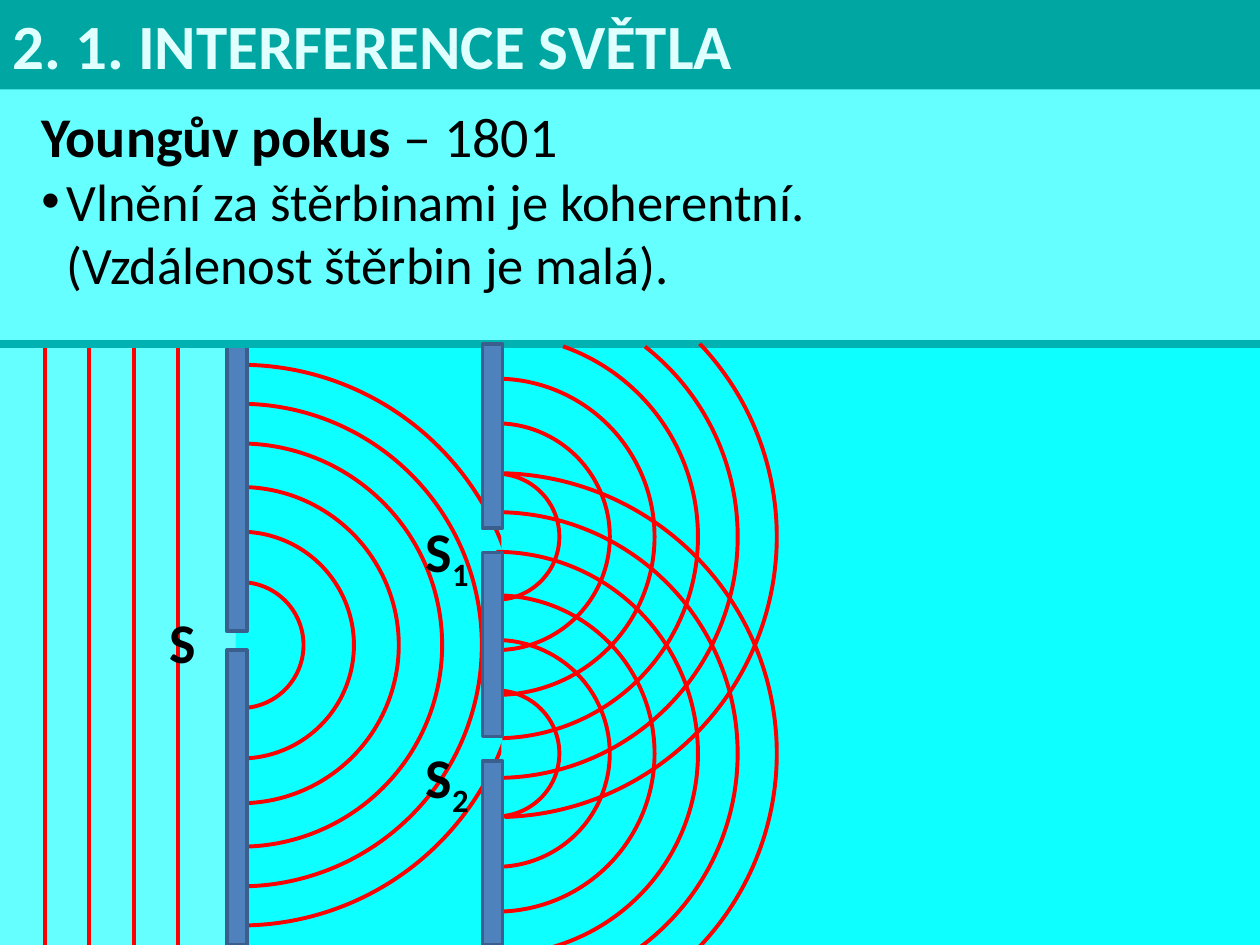
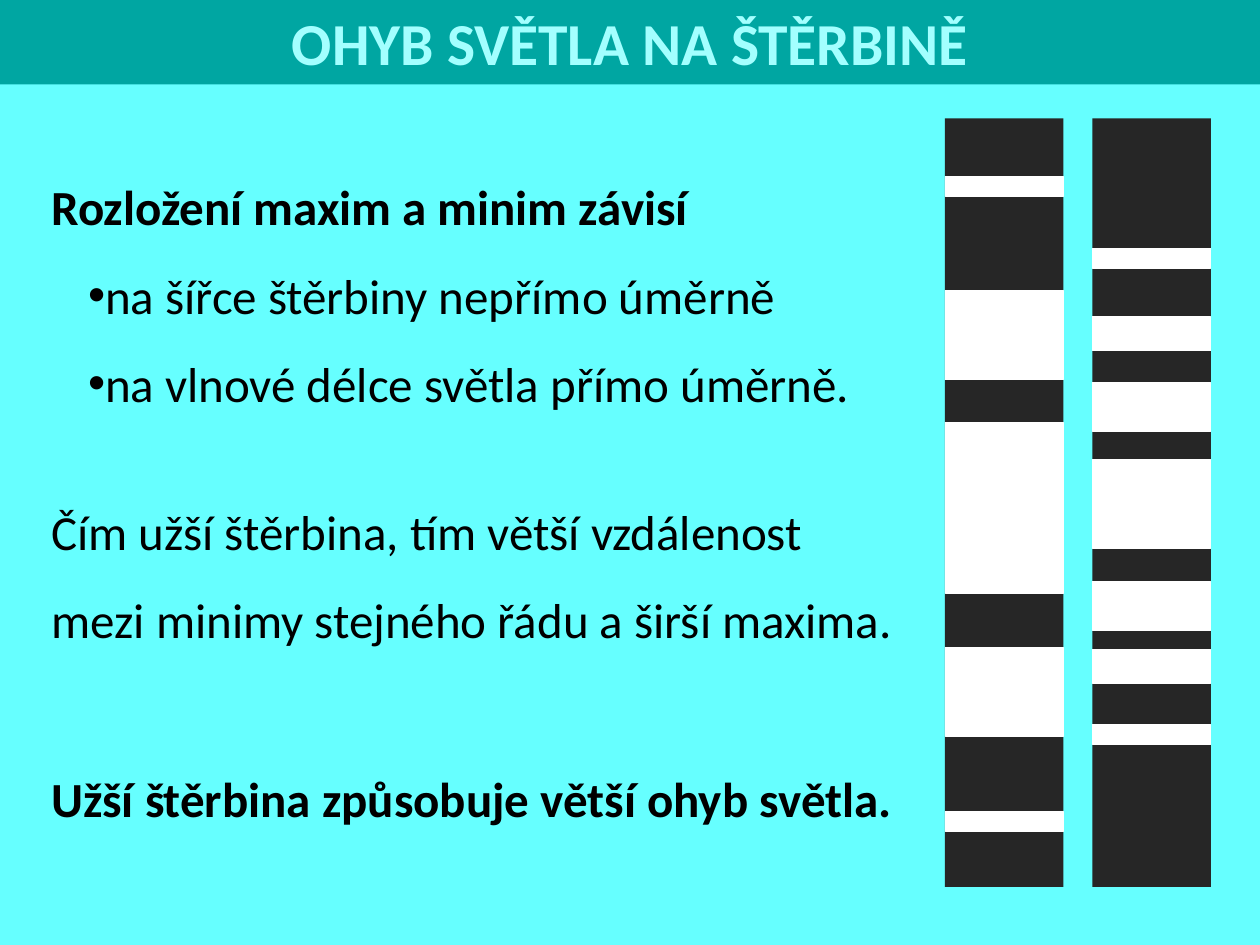
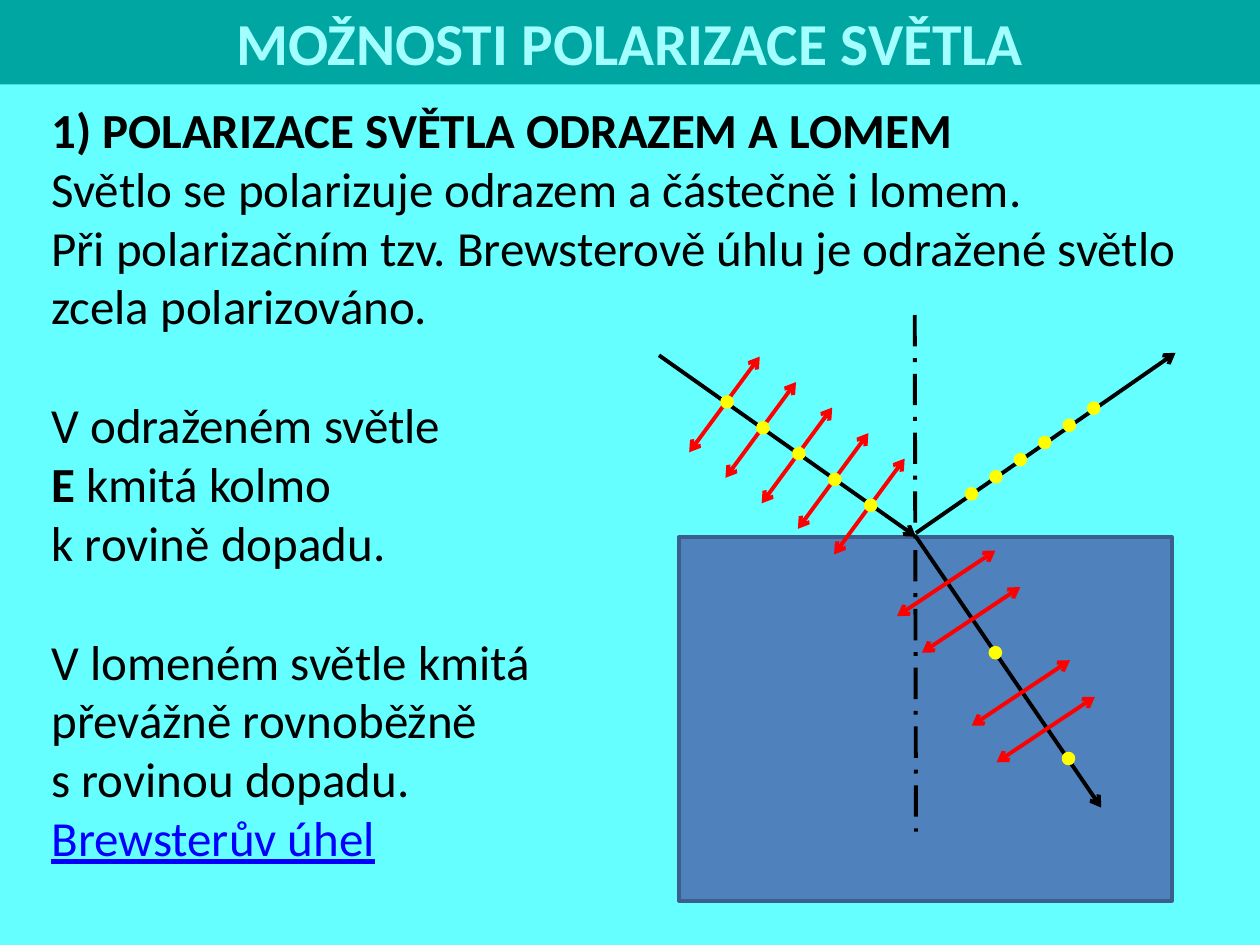
from dataclasses import dataclass

from lxml.etree import SubElement
from pptx import Presentation
from pptx.dml.color import RGBColor
from pptx.enum.dml import MSO_LINE
from pptx.enum.shapes import MSO_CONNECTOR, MSO_SHAPE
from pptx.enum.text import MSO_ANCHOR, PP_ALIGN
from pptx.oxml.ns import qn
from pptx.util import Inches, Pt

# The grid has 10 columns and 7.5 rows, each one inch.
COLUMNS, ROWS = 10, 7.5
FONT = "Calibri"
BACKGROUND, BAND, DIVIDER = "66FFFF", "00A6A2", "00B2B2"
WATER, BLOCK, BLOCK_EDGE = "0DFFFF", "4F81BD", "3A5F8C"
DARK, WHITE, BLACK = "262626", "FFFFFF", "000000"
RED, YELLOW, LINK = "FF0000", "FFFF00", "0000FF"
THIN = 2.25
BLANK_LINE = 34.2

WAVE_DIAMETERS = [1, 1.8, 2.51, 3.2, 3.83, 4.45]
WAVE_STARTS = [270] * 6
CLIPPED_STARTS = [270, 267.4, 270, 289.32, 308.01, 316.49]
WAVE_END = 88.32
DEGREE = 0.6  # one degree as an arc adjustment


@dataclass
class Box:
    left: float
    top: float
    width: float
    height: float

    def inner(self, left, top, width, height):
        return Box(self.left + left, self.top + top, width, height)

    def point(self, x, y):
        return self.left + x, self.top + y

    def lengths(self):
        return [Inches(v) for v in (self.left, self.top, self.width, self.height)]


def color(hex_string):
    return RGBColor.from_string(hex_string)


def set_all(target, values):
    for name, value in values.items():
        setattr(target, name, value)


def add_block(slide, box, fill=None, edge=None, edge_width=2, kind=MSO_SHAPE.RECTANGLE):
    shape = slide.shapes.add_shape(kind, *box.lengths())
    shape.shadow.inherit = False
    if fill:
        shape.fill.solid()
        shape.fill.fore_color.rgb = color(fill)
    else:
        shape.fill.background()
    if edge:
        shape.line.color.rgb = color(edge)
        shape.line.width = Pt(edge_width)
    else:
        shape.line.fill.background()
    return shape


def add_line(slide, start, end, line_color, width=THIN, arrows=(), dash=None):
    """Draw a line; arrows may hold headEnd (at start) and tailEnd (at end)."""
    ends = [Inches(v) for v in (*start, *end)]
    connector = slide.shapes.add_connector(MSO_CONNECTOR.STRAIGHT, *ends)
    connector.line.color.rgb = color(line_color)
    connector.line.width = Pt(width)
    if dash:
        connector.line.dash_style = dash
    properties = connector._element.spPr
    for arrow in arrows:
        SubElement(properties.find(qn("a:ln")), qn(f"a:{arrow}"), type="arrow")
    SubElement(properties, qn("a:effectLst"))


def add_run(paragraph, text, size, text_color=BLACK, baseline=None, **font):
    run = paragraph.add_run()
    run.text = text
    set_all(run.font, {"name": FONT, "size": Pt(size), "bold": False, **font})
    run.font.color.rgb = color(text_color)
    if baseline:
        run._r.get_or_add_rPr().set("baseline", str(baseline * 1000))


def add_bullet(paragraph, margin, indent):
    properties = paragraph._p.get_or_add_pPr()
    properties.set("marL", str(Inches(margin)))
    properties.set("indent", str(Inches(indent)))
    SubElement(properties, qn("a:buFont"), typeface="Arial")
    SubElement(properties, qn("a:buChar"), char="•")


def add_text(slide, box, paragraphs):
    """Write paragraphs, each a list of (text, font values) and a dict of formats."""
    frame = slide.shapes.add_textbox(*box.lengths()).text_frame
    frame.word_wrap = True
    for index, (runs, layout) in enumerate(paragraphs):
        paragraph = frame.add_paragraph() if index else frame.paragraphs[0]
        values = dict(layout)
        bullet = values.pop("bullet", None)
        set_all(paragraph, values)
        if bullet:
            add_bullet(paragraph, *bullet)
        for text, font in runs:
            for number, line in enumerate(text.split("\n")):
                if number:
                    paragraph.add_line_break()
                if line:
                    add_run(paragraph, line, **font)


def add_page(presentation, title, height=0.67, size=34, title_color="A3FFFF",
             alignment=PP_ALIGN.CENTER):
    slide = presentation.slides.add_slide(presentation.slide_layouts[6])
    slide.background.fill.solid()
    slide.background.fill.fore_color.rgb = color(BACKGROUND)
    frame = add_block(slide, Box(0, 0, COLUMNS, height), BAND).text_frame
    set_all(frame, {"word_wrap": True, "vertical_anchor": MSO_ANCHOR.MIDDLE})
    frame.paragraphs[0].alignment = alignment
    add_run(frame.paragraphs[0], title, size, title_color, bold=True)
    return slide


def spread(first, last, count):
    """Return count evenly spaced points from first to last."""
    return [tuple(a + (b - a) * i / (count - 1) for a, b in zip(first, last))
            for i in range(count)]


def draw_waves(slide, center, starts):
    x, y = center
    for diameter, start in zip(WAVE_DIAMETERS, starts):
        box = Box(x - diameter / 2, y - diameter / 2, diameter, diameter)
        arc = add_block(slide, box, edge=RED, edge_width=THIN, kind=MSO_SHAPE.ARC)
        arc.adjustments[0] = start * DEGREE
        arc.adjustments[1] = WAVE_END * DEGREE


def draw_barrier(slide, box, plates):
    for top, height in plates:
        add_block(slide, box.inner(0, top, box.width, height), BLOCK, BLOCK_EDGE)


def label_source(slide, box, number=""):
    runs = [("S", {"size": 32, "bold": True})]
    if number:
        runs.append((number, {"size": 32, "bold": True, "baseline": -25}))
    add_text(slide, box, [(runs, {})])


def draw_double_slit(slide, box):
    for i in range(4):
        x = 1.41 - 0.35 * i
        add_line(slide, box.point(x, 0), box.point(x, box.height), RED)
    label_source(slide, box.inner(1.25, 2.04, 0.39, 0.64))

    add_block(slide, box.inner(1.87, 0, box.width - 1.87, box.height), WATER)
    draw_waves(slide, box.point(1.91, 2.39), WAVE_STARTS)
    draw_barrier(slide, box.inner(1.8, 0, 0.16, box.height), [(0, 2.28), (2.43, 2.34)])

    add_block(slide, box.inner(3.98, 0, box.width - 3.98, box.height), WATER)
    for number, top in (("1", 1.32), ("2", 3.11)):
        label_source(slide, box.inner(3.28, top, 0.63, 0.64), number)
    add_line(slide, box.point(0, 0), box.point(box.width, 0), DIVIDER, 4.5)
    draw_waves(slide, box.point(3.94, 1.53), CLIPPED_STARTS)
    draw_waves(slide, box.point(3.94, 3.25), WAVE_STARTS)
    plate = 1.46
    pitch = (box.height - plate) / 2
    draw_barrier(slide, box.inner(3.83, 0, 0.16, box.height),
                 [(i * pitch, plate) for i in range(3)])


def draw_fringes(slide, box, maxima):
    """Draw a dark strip with white maxima given as (middle, height)."""
    add_block(slide, box, DARK)
    for middle, height in maxima:
        stripe = box.inner(0, middle - height / 2, box.width, height)
        add_block(slide, stripe, WHITE, WHITE, 0.5)


def draw_dots(slide, box, points):
    size = 0.08
    for x, y in points:
        add_block(slide, box.inner(x - size / 2, y - size / 2, size, size),
                  YELLOW, YELLOW, kind=MSO_SHAPE.OVAL)


def draw_oscillations(slide, box, points, reach):
    across, up = reach
    for x, y in points:
        add_line(slide, box.point(x + across, y - up), box.point(x - across, y + up),
                 RED, arrows=("headEnd", "tailEnd"))


def draw_polarization(slide, box):
    add_block(slide, box.inner(0.16, 1.76, 3.91, 2.89), BLOCK, BLOCK_EDGE)
    impact = box.point(2.04, 1.76)
    tip = ("tailEnd",)
    add_line(slide, box.point(0, 0.32), impact, BLACK, arrows=tip)
    add_line(slide, box.point(2.04, 1.73), box.point(4.1, 0.3), BLACK, arrows=tip)
    add_line(slide, box.point(2.03, 0), box.point(2.04, 4.1), BLACK,
             dash=MSO_LINE.LONG_DASH_DOT)
    add_line(slide, impact, box.point(3.51, 3.91), BLACK, arrows=tip)

    incident = spread((0.52, 0.71), (1.67, 1.52), 5)
    refracted = spread((2.28, 2.13), (3.07, 3.29), 5)
    draw_oscillations(slide, box, incident, (0.28, 0.38))
    draw_oscillations(slide, box, refracted[:2] + refracted[3:], (0.39, 0.26))
    for first, last, count in (((2.48, 1.42), (3.45, 0.74), 6),
                               ((0.54, 0.69), (1.68, 1.51), 5),
                               ((2.67, 2.68), (3.25, 3.52), 2)):
        draw_dots(slide, box, spread(first, last, count))


def build_interference(presentation):
    slide = add_page(presentation, "2. 1. INTERFERENCE SVĚTLA", 0.71, 36, "E0FFFF",
                     PP_ALIGN.LEFT)
    add_text(slide, Box(0.23, 0.76, 9.53, 1.65), [
        ([("Youngův pokus", {"size": 32, "bold": True}), (" – 1801", {"size": 32})], {}),
        ([("Vlnění za štěrbinami je koherentní. \n(Vzdálenost štěrbin je malá).",
           {"size": 30})], {"bullet": (0.2, -0.2)}),
    ])
    draw_double_slit(slide, Box(0, 2.73, COLUMNS, ROWS - 2.73))


def build_diffraction(presentation):
    slide = add_page(presentation, "OHYB SVĚTLA NA ŠTĚRBINĚ")
    plain, strong = {"size": 28}, {"size": 28, "bold": True}
    loose = {"line_spacing": 1.5}
    item = {**loose, "bullet": (0, 0.29)}
    add_text(slide, Box(0.31, 1.12, 9.45, 5.52), [
        ([("Rozložení maxim a minim závisí", strong)], loose),
        ([("na šířce štěrbiny nepřímo úměrně", plain)], item),
        ([("na vlnové délce světla přímo úměrně.", plain)], item),
        ([("Čím užší štěrbina, tím větší vzdálenost", plain)],
         {**loose, "space_before": Pt(BLANK_LINE)}),
        ([("mezi minimy stejného řádu a širší maxima.", plain)], loose),
        ([("Užší štěrbina způsobuje větší ohyb světla.", strong)],
         {"space_before": Pt(2 * BLANK_LINE)}),
    ])
    strip = Box(7.5, 0.94, 0.94, 6.1)
    draw_fringes(slide, strip, [(0.54, 0.16), (1.72, 0.71), (3.09, 1.36),
                                (4.55, 0.71), (5.58, 0.16)])
    draw_fringes(slide, strip.inner(1.17, 0, strip.width, strip.height),
                 [(1.11, 0.16), (1.71, 0.27), (2.29, 0.39), (3.06, 0.71),
                  (3.87, 0.39), (4.35, 0.27), (4.89, 0.16)])


def build_polarization(presentation):
    slide = add_page(presentation, "MOŽNOSTI POLARIZACE SVĚTLA")
    plain, strong = {"size": 28}, {"size": 28, "bold": True}
    after_gap = {"space_before": Pt(BLANK_LINE)}
    add_text(slide, Box(0.31, 0.74, 9.45, 6.23), [
        ([("1) POLARIZACE SVĚTLA ODRAZEM A LOMEM", strong)], {}),
        ([("Světlo se polarizuje odrazem a částečně i lomem.", plain)], {}),
        ([("Při polarizačním tzv. Brewsterově úhlu je odražené světlo "
           "zcela polarizováno.", plain)], {}),
        ([("V odraženém světle \n", plain), ("E", strong),
          (" kmitá kolmo \nk rovině dopadu.", plain)], after_gap),
        ([("V lomeném světle kmitá \npřevážně rovnoběžně \ns rovinou dopadu.", plain)],
         after_gap),
        ([("Brewsterův úhel", {"size": 28, "text_color": LINK, "underline": True})], {}),
    ])
    draw_polarization(slide, Box(5.23, 2.5, 4.1, 4.65))


def main():
    presentation = Presentation()
    set_all(presentation, {"slide_width": Inches(COLUMNS), "slide_height": Inches(ROWS)})
    for build in (build_interference, build_diffraction, build_polarization):
        build(presentation)
    presentation.save("out.pptx")


if __name__ == "__main__":
    main()
